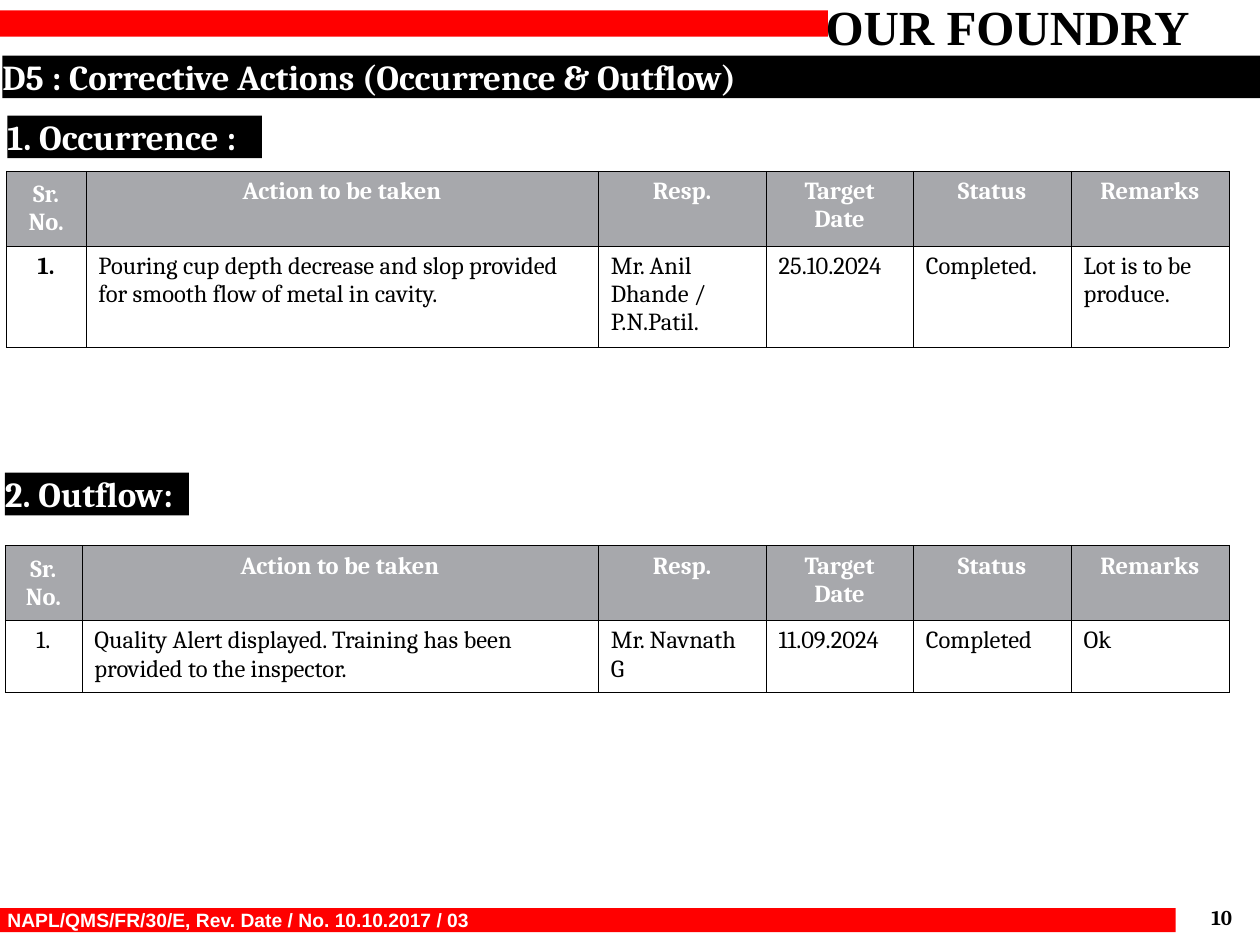
from dataclasses import dataclass

from lxml import etree
from pptx import Presentation
from pptx.dml.color import RGBColor
from pptx.enum.shapes import MSO_SHAPE
from pptx.enum.text import MSO_ANCHOR, MSO_AUTO_SIZE, PP_ALIGN
from pptx.oxml.ns import qn
from pptx.util import Cm, Pt

RECTANGLE = MSO_SHAPE.RECTANGLE
TOP, MIDDLE = MSO_ANCHOR.TOP, MSO_ANCHOR.MIDDLE
LEFT, CENTER, RIGHT = PP_ALIGN.LEFT, PP_ALIGN.CENTER, PP_ALIGN.RIGHT
NO_AUTOFIT = MSO_AUTO_SIZE.NONE
TITLE_ONLY = 5

COLORS = {
    "black": "000000",
    "white": "FFFFFF",
    "red": "FF0000",
    "grey": "A7A8AC",
}
HEADERS = ("Sr. No.", "Action to be taken", "Resp.", "Target Date", "Status", "Remarks")
SHARED_WIDTHS = (3.38, 2.97, 3.18, 3.18)
HEADER_HEIGHT = 1.51


@dataclass(frozen=True)
class Box:
    left: float
    top: float
    width: float
    height: float

    def lengths(self) -> tuple:
        return Cm(self.left), Cm(self.top), Cm(self.width), Cm(self.height)


@dataclass(frozen=True)
class Style:
    size: float
    color: str
    font: str = "Cambria"
    bold: bool = True
    align: PP_ALIGN = LEFT


@dataclass(frozen=True)
class Label:
    text: str
    box: Box
    style: Style
    margins: tuple = (0.25, 0.13)


@dataclass(frozen=True)
class ActionTable:
    left: float
    top: float
    first_widths: tuple
    row_height: float
    values: tuple
    bold_number: bool


HEADING = Style(20, "white")
RED_BARS = (Box(0, 0.21, 16.69, 0.53), Box(0, 18.31, 23.7, 0.48))
MASTER_LABELS = (
    Label("OUR FOUNDRY", Box(16.08, -0.2, 8.46, 1.47),
          Style(28, "black", "Times New Roman", align=CENTER)),
    Label("NAPL/QMS/FR/30/E, Rev. Date / No. 10.10.2017 / 03",
          Box(-0.1, 18.19, 22.83, 0.74), Style(11, "white", "Arial")),
    Label("10", Box(23.47, 18.24, 1.37, 0.51),
          Style(12, "black", align=RIGHT), (0, 0)),
)
TITLE = Label("D5 : Corrective Actions (Occurrence & Outflow)",
              Box(0.05, 1.12, 25.35, 0.86), HEADING, (0, 0))
SECTION_HEADINGS = (
    Label("1. Occurrence :", Box(0.15, 2.33, 5.13, 0.86), HEADING, (0, 0)),
    Label("2. Outflow:", Box(0.1, 9.53, 3.71, 0.86), HEADING, (0, 0)),
)
ACTION_TABLES = (
    ActionTable(0.13, 3.45, (1.6, 10.33), 2.04, (
        "1.",
        "Pouring cup depth decrease and slop provided for smooth flow of metal in cavity.",
        "Mr. Anil Dhande / P.N.Patil.", "25.10.2024", "Completed.",
        "Lot is to be produce."), True),
    ActionTable(0.1, 11, (1.55, 10.41), 1.45, (
        "1.",
        "Quality Alert displayed. Training has been provided to the inspector.",
        "Mr. Navnath G", "11.09.2024", "Completed", "Ok"), False),
)


def rgb(name: str) -> RGBColor:
    return RGBColor.from_string(COLORS[name])


def write(text_frame, text: str, style: Style) -> None:
    text_frame.text = text
    paragraph = text_frame.paragraphs[0]
    paragraph.alignment = style.align
    font = paragraph.runs[0].font
    font.name, font.size, font.bold = style.font, Pt(style.size), style.bold
    font.color.rgb = rgb(style.color)


def fill_label(shape, label: Label) -> None:
    frame = shape.text_frame
    frame.word_wrap = True
    frame.auto_size = NO_AUTOFIT
    frame.vertical_anchor = TOP
    horizontal, vertical = label.margins
    frame.margin_left = frame.margin_right = Cm(horizontal)
    frame.margin_top = frame.margin_bottom = Cm(vertical)
    write(frame, label.text, label.style)


def add_bar(slide, box: Box, color: str):
    shape = slide.shapes.add_shape(RECTANGLE, *box.lengths())
    shape.shadow.inherit = False
    shape.fill.solid()
    shape.fill.fore_color.rgb = rgb(color)
    shape.line.fill.background()
    return shape


def set_title(slide, label: Label) -> None:
    title = slide.shapes.title
    title.left, title.top, title.width, title.height = label.box.lengths()
    title.fill.solid()
    title.fill.fore_color.rgb = rgb("black")
    fill_label(title, label)


def add_borders(cell) -> None:
    properties = cell._tc.get_or_add_tcPr()
    for side in ("lnL", "lnR", "lnT", "lnB"):
        line = etree.SubElement(properties, qn(f"a:{side}"), w=str(Pt(0.25)))
        fill = etree.SubElement(line, qn("a:solidFill"))
        etree.SubElement(fill, qn("a:srgbClr"), val=COLORS["black"])


def fill_cell(cell, text: str, style: Style, background: str) -> None:
    add_borders(cell)
    cell.fill.solid()
    cell.fill.fore_color.rgb = rgb(background)
    write(cell.text_frame, text, style)


def add_action_table(slide, spec: ActionTable) -> None:
    widths = spec.first_widths + SHARED_WIDTHS
    heights = (HEADER_HEIGHT, spec.row_height)
    box = Box(spec.left, spec.top, sum(widths), sum(heights))
    table = slide.shapes.add_table(len(heights), len(widths), *box.lengths()).table
    for row, height in zip(table.rows, heights):
        row.height = Cm(height)
    for index, width in enumerate(widths):
        table.columns[index].width = Cm(width)
        fill_cell(table.cell(0, index), HEADERS[index],
                  Style(14, "white", align=CENTER), "grey")
        is_number = index == 0
        body_style = Style(14, "black", bold=is_number and spec.bold_number,
                           align=CENTER if is_number else LEFT)
        fill_cell(table.cell(1, index), spec.values[index], body_style, "white")
    table.cell(0, 0).vertical_anchor = MIDDLE


def main() -> None:
    presentation = Presentation()
    presentation.slide_width, presentation.slide_height = Cm(25.4), Cm(19.05)
    slide = presentation.slides.add_slide(presentation.slide_layouts[TITLE_ONLY])

    # Header and footer
    for box in RED_BARS:
        add_bar(slide, box, "red")
    for label in MASTER_LABELS:
        fill_label(slide.shapes.add_textbox(*label.box.lengths()), label)

    # Title and section headings
    set_title(slide, TITLE)
    for label in SECTION_HEADINGS:
        fill_label(add_bar(slide, label.box, "black"), label)

    # Corrective actions
    for spec in ACTION_TABLES:
        add_action_table(slide, spec)

    presentation.save("out.pptx")


if __name__ == "__main__":
    main()
